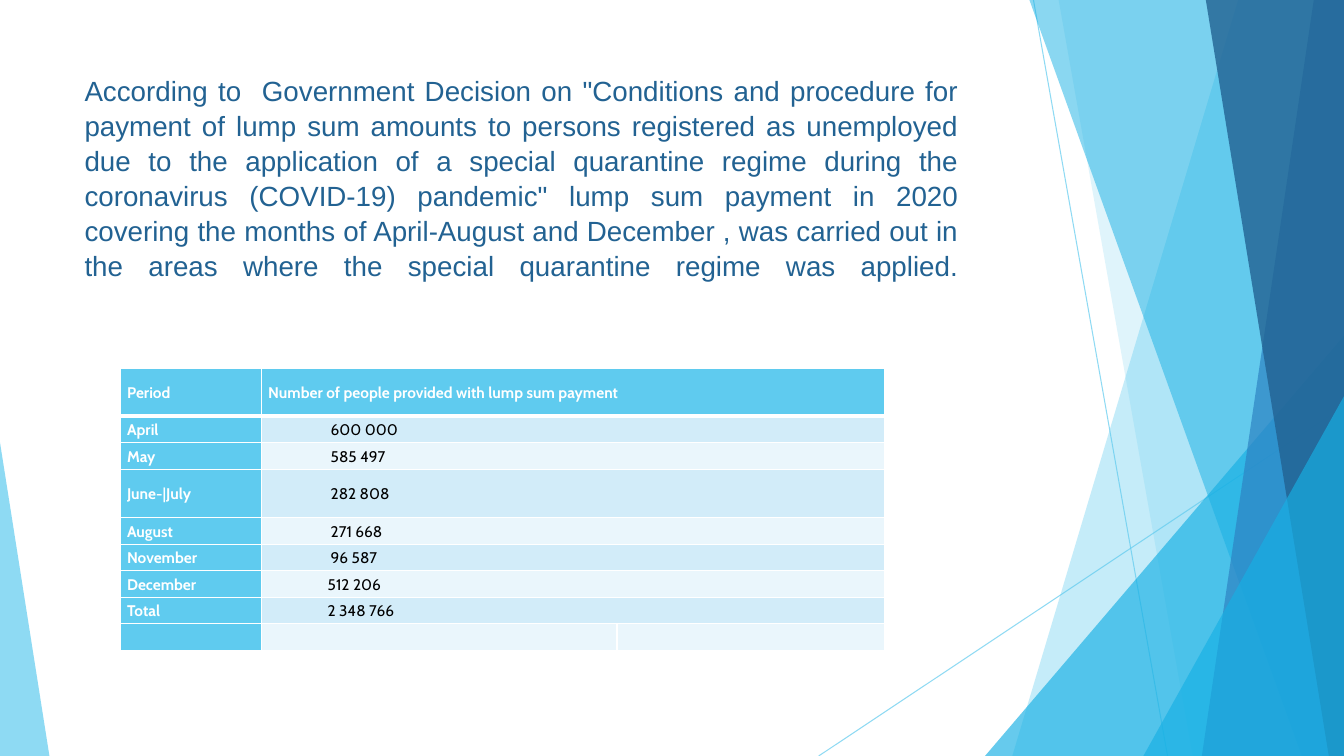
import pptx
import pptx.util
import pptx.dml.color
import pptx.enum.shapes
import pptx.enum.text
import pptx.oxml
import lxml.etree

deck = pptx.Presentation()
deck.slide_width = pptx.util.Inches(13.33)
deck.slide_height = pptx.util.Inches(7.5)
slide = deck.slides.add_slide(deck.slide_layouts[6])
GRID_ROWS = 75
GRID_COLUMNS = 133.3
DRAWING = "http://schemas.openxmlformats.org/drawingml/2006/main"


def grid(*cells):
    return [round(deck.slide_height * cell / GRID_ROWS) for cell in cells]


def paint(color_format, color, opacity=100):
    color_format.rgb = pptx.dml.color.RGBColor.from_string(color)
    if opacity < 100:
        for tone in color_format._xFill.iter("{%s}srgbClr" % DRAWING):
            alpha = lxml.etree.SubElement(tone, "{%s}alpha" % DRAWING)
            alpha.set("val", str(opacity * 1000))


SKY, AZURE, BLUE, NAVY, WHITE = "5FCBEF", "17B0E4", "2E83C3", "226292", "FFFFFF"

for ray in [(102.5, 0, 115.8, 75), (GRID_COLUMNS, 40.3, 81.2, 75)]:
    line = slide.shapes.add_connector(pptx.enum.shapes.MSO_CONNECTOR.STRAIGHT, *grid(*ray))
    line.line.width = pptx.util.Pt(0.75)
    line.line.fill.solid()
    paint(line.line.fill.fore_color, SKY, 70)
    lxml.etree.SubElement(line._element.spPr, "{%s}effectLst" % DRAWING)

facets = [
    ("band", 122.8, 100.4, SKY, 36),
    ("band", 105, 118.3, SKY, 20),
    ("triangle", 97.7, 33.3, AZURE, 66),
    ("band", 102.1, 129.1, AZURE, 50),
    ("band", 130.3, 119.2, BLUE, 70),
    ("band", 119.6, 131.8, NAVY, 80),
    ("triangle", 113.4, 39.3, AZURE, 66),
    ("left triangle", 4.9, 43.9, SKY, 70),
]
for kind, first, second, color, opacity in facets:
    if kind == "band":
        outline = slide.shapes.build_freeform(*grid(first, 0))
        corners = [(GRID_COLUMNS, 0), (GRID_COLUMNS, GRID_ROWS), (second, GRID_ROWS)]
        outline.add_line_segments([grid(*corner) for corner in corners], close=True)
        facet = outline.convert_to_shape()
    else:
        left, right = (first, GRID_COLUMNS) if kind == "triangle" else (0, first)
        facet = slide.shapes.add_shape(
            pptx.enum.shapes.MSO_SHAPE.ISOSCELES_TRIANGLE,
            *grid(left, second, right - left, GRID_ROWS - second))
        facet.adjustments[0] = 1 if kind == "triangle" else 0
    facet.shadow.inherit = False
    facet.line.fill.background()
    facet.fill.solid()
    paint(facet.fill.fore_color, color, opacity)

decision = slide.shapes.add_textbox(*grid(7.4, 6.7, 88.6, 26.2)).text_frame
decision.word_wrap = True
decision.vertical_anchor = pptx.enum.text.MSO_ANCHOR.TOP
decision.text = (
    'According to  Government Decision on "Conditions and procedure for payment of '
    "lump sum amounts to persons registered as unemployed due to the application of a "
    'special quarantine regime during the coronavirus (COVID-19) pandemic" lump sum '
    "payment in 2020 covering the months of April-August and December , was carried out "
    "in the areas where the special quarantine regime was applied.\v")
statement = decision.paragraphs[0]
statement.alignment = pptx.enum.text.PP_ALIGN.JUSTIFY
statement.line_spacing = 1.05
statement.font.name = "Arial"
statement.font.size = pptx.util.Pt(19.8)
paint(statement.font.color, NAVY)

payments = [
    ("Period", "Number of people provided with lump sum payment"),
    ("April", "600 000"),
    ("May", "585 497"),
    ("June-|July", "282 808"),
    ("August", "271 668"),
    ("November", "96 587"),
    ("December", "512 206"),
    ("Total", "2 348 766"),
    ("", ""),
]
TALL_ROWS = (0, 3)
column_widths = [14, 35.3, 26.5]
row_heights = [4.8 if row in TALL_ROWS else 2.63 for row in range(len(payments))]
table = slide.shapes.add_table(
    len(payments), len(column_widths),
    *grid(11.9, 36.5, sum(column_widths), sum(row_heights))).table
for column, width in zip(table.columns, grid(*column_widths)):
    column.width = width
for row, height in zip(table.rows, grid(*row_heights)):
    row.height = height

for r, entry in enumerate(payments):
    for c, text in enumerate(entry + ("",)):
        cell = table.cell(r, c)
        heading = r == 0 or c == 0
        indent = 0 if heading else 5.9 if entry[0] in ("December", "Total") else 6.2
        cell.margin_left, cell.margin_right = grid(0.7 + indent, 0.7)
        cell.margin_top = cell.margin_bottom = 0
        cell.vertical_anchor = pptx.enum.text.MSO_ANCHOR.MIDDLE
        cell.fill.solid()
        paint(cell.fill.fore_color, SKY if heading else "D2ECF9" if r % 2 else "EAF6FC")
        cell.text = text
        label = cell.text_frame.paragraphs[0]
        label.alignment = pptx.enum.text.PP_ALIGN.JUSTIFY
        label.line_spacing = 1.07
        label.font.name = "Cabin"
        label.font.size = pptx.util.Pt(11)
        label.font.bold = heading
        paint(label.font.color, WHITE if heading else "000000")
        for place, side in enumerate("LRTB"):
            thick = (r, side) in [(0, "B"), (1, "T")]
            border = pptx.oxml.parse_xml(
                f'<a:ln{side} xmlns:a="{DRAWING}" w="{pptx.util.Pt(3 if thick else 1)}">'
                f'<a:solidFill><a:srgbClr val="{WHITE}"/></a:solidFill></a:ln{side}>')
            cell._tc.get_or_add_tcPr().insert(place, border)
    if entry[0]:
        table.cell(r, 1).merge(table.cell(r, 2))

deck.save("out.pptx")
